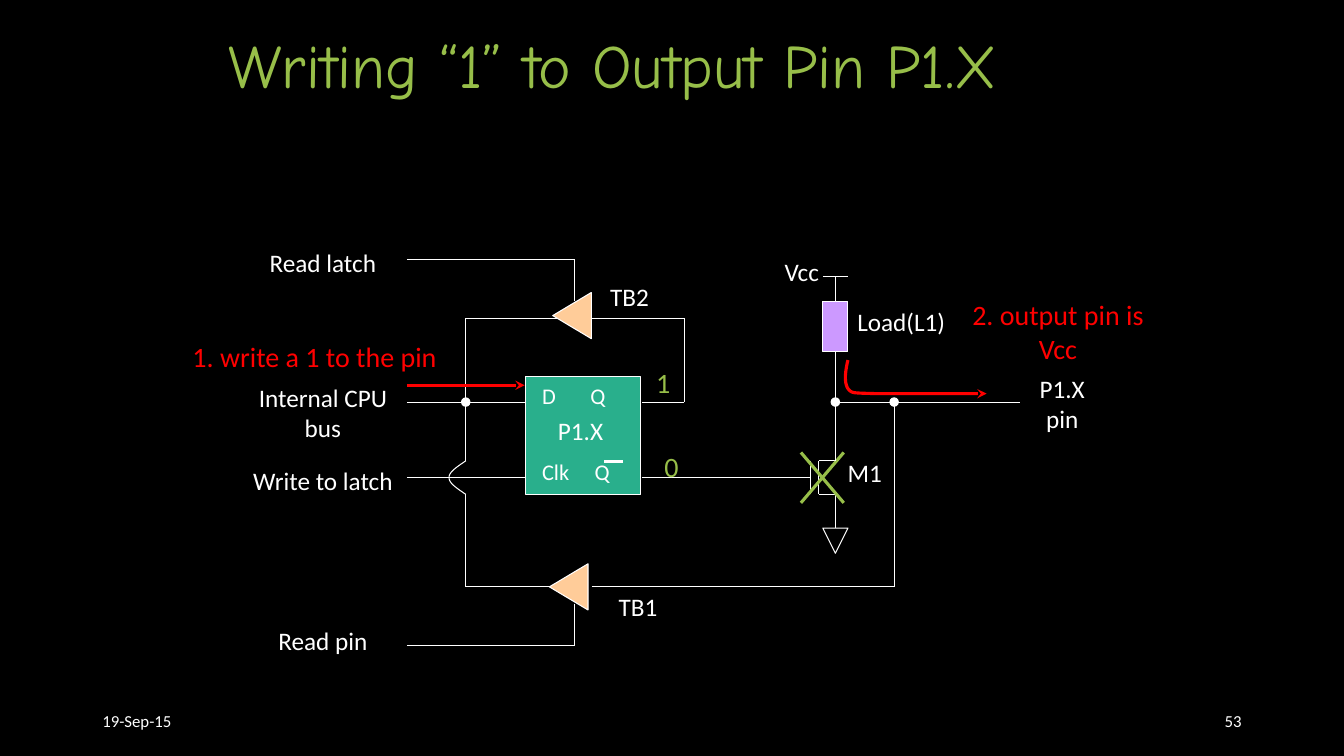
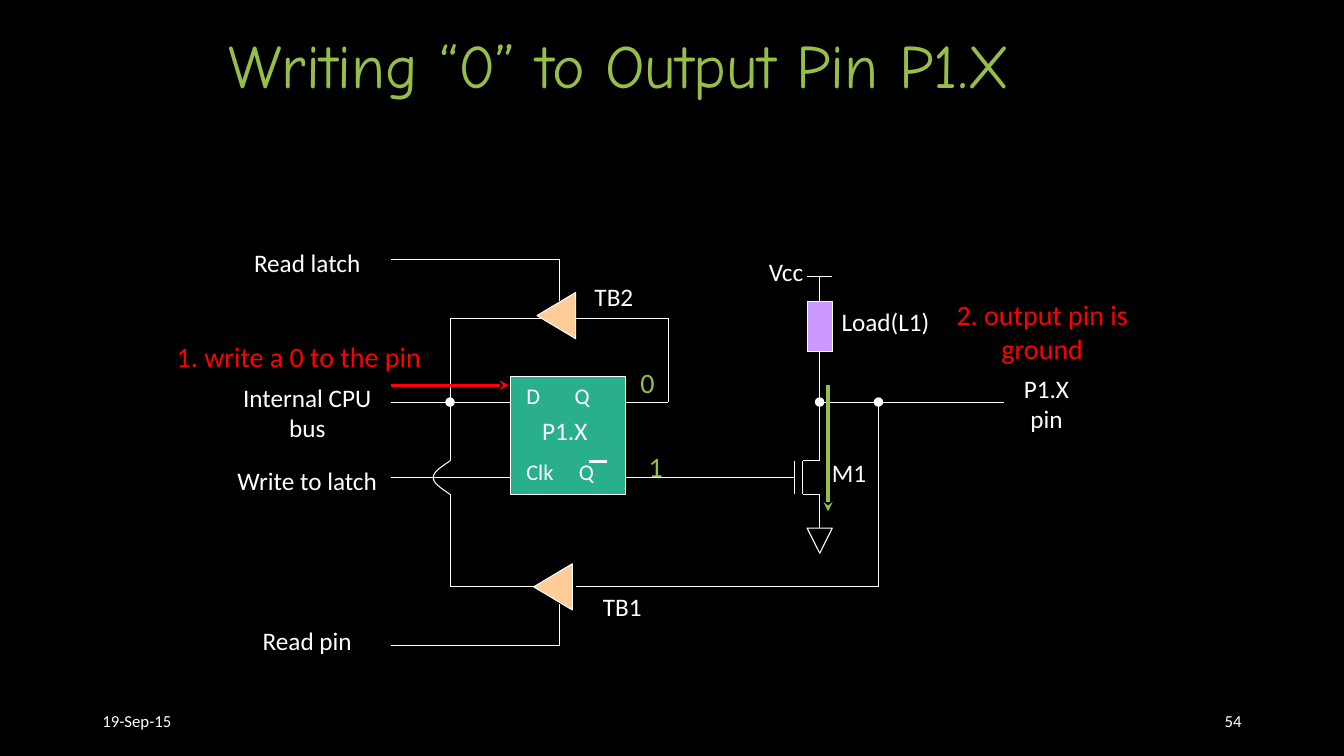
from lxml.etree import SubElement
from pptx import Presentation
from pptx.dml.color import RGBColor
from pptx.enum.shapes import MSO_CONNECTOR, MSO_SHAPE
from pptx.enum.text import MSO_ANCHOR, PP_ALIGN
from pptx.oxml.ns import qn
from pptx.util import Inches, Pt

BLACK = RGBColor(0x00, 0x00, 0x00)
WHITE = RGBColor(0xFF, 0xFF, 0xFF)
GREEN = RGBColor(0x97, 0xBE, 0x49)
TEAL = RGBColor(0x29, 0xAF, 0x8C)
PEACH = RGBColor(0xFF, 0xCC, 0x99)
LILAC = RGBColor(0xCC, 0x99, 0xFF)
RED = RGBColor(0xFF, 0x00, 0x00)

deck = Presentation()
deck.slide_width, deck.slide_height = Inches(13.33), Inches(7.5)
# The page is a grid of 160 columns and 90 rows.
CELL = deck.slide_width / 160
TOP = 30.88  # row where the circuit starts


def write(slide, text, col, row, wide, high=4.8, size=18, font="Calibri",
          color=WHITE, align=PP_ALIGN.CENTER, anchor=MSO_ANCHOR.TOP, lead=None):
    """Add a text box placed in grid cells and return its paragraphs."""
    box = slide.shapes.add_textbox(*(round(n * CELL) for n in (col, row, wide, high)))
    frame = box.text_frame
    frame.word_wrap = True
    frame.vertical_anchor = anchor
    frame.text = text
    for para in frame.paragraphs:
        para.alignment = align
        para.line_spacing = lead
        para.font.size = Pt(size)
        para.font.name = font
        para.font.color.rgb = color
    return frame.paragraphs


def ink(item, color=WHITE, width=0.75, arrow=False):
    """Style an outline, without shadow, with an optional arrowhead at its end."""
    item.line.color.rgb = color
    item.line.width = Pt(width)
    props = item._element.spPr
    if arrow:
        SubElement(props.find(qn("a:ln")), qn("a:tailEnd"), type="stealth")
    SubElement(props, qn("a:effectLst"))


# Places below are columns and rows counted from the circuit's corner.
SHAPES = [  # kind, col, row, wide, high, turn, fill
    (MSO_SHAPE.RECTANGLE, 14.16, 14, 13.7, 14, 0, TEAL),
    (MSO_SHAPE.ISOSCELES_TRIANGLE, 16.9, 4.4, 5.5, 4.6, 270, PEACH),
    (MSO_SHAPE.ISOSCELES_TRIANGLE, 16.5, 36.7, 5.5, 4.6, 270, PEACH),
    (MSO_SHAPE.ISOSCELES_TRIANGLE, 49.5, 32, 3, 3, 180, None),
    *((MSO_SHAPE.OVAL, col - 0.5, 16.5, 1, 1, 0, WHITE) for col in (7, 51, 58)),
    (MSO_SHAPE.RECTANGLE, 49.5, 5, 3, 6, 0, LILAC),
]
WIRES = [  # from col, row, to col, row
    (0, 17, 14.16, 17), (22, 7, 33, 7), (33, 7, 33, 17), (28, 17, 33, 17),
    (0, 26, 14.16, 26), (28, 26, 48, 26),
    (48, 24, 48, 28), (49, 24, 49, 28), (49, 24, 51, 24), (49, 28, 51, 28),
    (51, 17, 73, 17), (49.5, 2, 52.5, 2), (51, 28, 51, 32),
    (58, 17, 58, 39), (22, 39, 58, 39),
    (7, 7, 18, 7), (7, 7, 7, 24), (7, 28, 7, 39), (7, 39, 17, 39),
    (20, 41, 20, 46), (20, 0, 20, 5), (0, 0, 20, 0), (0, 46, 20, 46),
]
LABELS = [  # text, col, row, wide
    ("Vcc", 43, -1, 8), (" Load(L1)", 51, 5, 15), ("M1", 51, 23, 7),
    ("P1.X pin", 72, 13, 12), ("P1.X ", 15, 18, 12),
    ("Read latch", -20, -2, 20), ("Internal CPU bus", -20, 14, 20),
    ("Write to latch", -20, 24, 20), ("Read pin", -20, 43, 20),
    ("TB1", 22, 39, 11), ("TB2", 21, 2, 11),
]
HOP = [(7, 24), (6, 24.7), (5, 25.3), (5, 26), (5, 26.7), (6, 27.3), (7, 28)]
FLOW = [(52.5, 12), (52.2, 13.3), (52, 14.6), (52.5, 15.4), (53, 16),
        (53, 15.9), (55.8, 16), (58.6, 16), (63.8, 16), (69, 16)]
CROSS = [(46.9, 23, 52, 29, GREEN, 2.25, False), (52, 23, 46.9, 29, GREEN, 2.25, False)]
SINK = [(52, 15, 52, 30, GREEN, 2.25, True)]

PAGES = [  # number, bit, inverse, level, left column, marks, curves
    (53, "1", "0", "Vcc", 48.45, CROSS, [(HOP, WHITE, 0.75, False), (FLOW, RED, 2.25, True)]),
    (54, "0", "1", "ground", 46.58, SINK, [(HOP, WHITE, 0.75, False)]),
]

for page, bit, inverse, level, left, marks, curves in PAGES:
    slide = deck.slides.add_slide(deck.slide_layouts[6])
    slide.background.fill.solid()
    slide.background.fill.fore_color.rgb = BLACK
    write(slide, f"Writing “{bit}” to Output Pin P1.X", 26, 3.6, 108, 15, size=44,
          font="Comic Neue", color=GREEN, align=PP_ALIGN.LEFT, lead=0.9)
    for text, col, align in (("19-Sep-15", 11, PP_ALIGN.LEFT), (str(page), 113, PP_ALIGN.RIGHT)):
        write(slide, text, col, 83.4, 36, size=12, align=align, anchor=MSO_ANCHOR.MIDDLE)

    for kind, col, row, wide, high, turn, fill in SHAPES:
        part = slide.shapes.add_shape(
            kind, *(round(n * CELL) for n in (left + col, TOP + row, wide, high)))
        part.rotation = turn
        ink(part)
        if fill is None:
            part.fill.background()
        else:
            part.fill.solid()
            part.fill.fore_color.rgb = fill
    load = part

    plain = [(*wire, WHITE, 0.75, False) for wire in WIRES]
    bar = (23.5, 24.1, 25.7, 24.1, WHITE, 2.25, False)
    push = (0, 15, 14, 15, RED, 2.25, True)
    supply = (51, 2, 51, 5, WHITE, 0.75, False)
    drain = (51, 24, 51, 11, WHITE, 0.75, False)
    for wire in [*plain, bar, push, *marks, supply, drain]:
        col, row, end, stop, color, width, arrow = wire
        line = slide.shapes.add_connector(
            MSO_CONNECTOR.STRAIGHT,
            *(round(n * CELL) for n in (left + col, TOP + row, left + end, TOP + stop)))
        ink(line, color, width, arrow)
        if wire in (supply, drain):
            line.end_connect(load, 0 if wire == supply else 2)

    for knots, color, width, arrow in curves:
        dots = []
        for i in range(0, len(knots) - 1, 3):
            a, b, c, d = knots[i:i + 4]
            for t in (step / 12 for step in range(13)):
                u = 1 - t
                x, y = (u**3 * a[k] + 3 * u * u * t * b[k] + 3 * u * t * t * c[k] + t**3 * d[k]
                        for k in (0, 1))
                dots.append((round((left + x) * CELL), round((TOP + y) * CELL)))
        path = slide.shapes.build_freeform(*dots[0])
        path.add_line_segments(dots[1:], close=False)
        curve = path.convert_to_shape()
        curve.fill.background()
        ink(curve, color, width, arrow)

    ports = write(slide, "D\tQ\nClk\tQ", left + 14.9, TOP + 14, 12.3, 14,
                  size=16, align=PP_ALIGN.LEFT)
    ports[1].space_before = Pt(35.5)
    for para, stop in zip(ports, (0.48, 0.52)):
        props = para._p.get_or_add_pPr()
        tabs = SubElement(props, qn("a:tabLst"))
        SubElement(tabs, qn("a:tab"), pos=str(Inches(stop)), algn="l")
        # Tab stops come before the default run format.
        props.find(qn("a:defRPr")).addprevious(tabs)

    for text, col, row, wide in LABELS:
        write(slide, text, left + col, TOP + row, wide)
    for text, col, row, wide, color in (
            (f"2. output pin is {level}", 66, 4, 23, RED),
            (f"1. write a {bit} to the pin", -28, 9, 34, RED),
            (bit, 28, 12, 5, GREEN), (inverse, 29, 22, 5, GREEN)):
        write(slide, text, left + col, TOP + row, wide, size=20, color=color)

deck.save("out.pptx")
